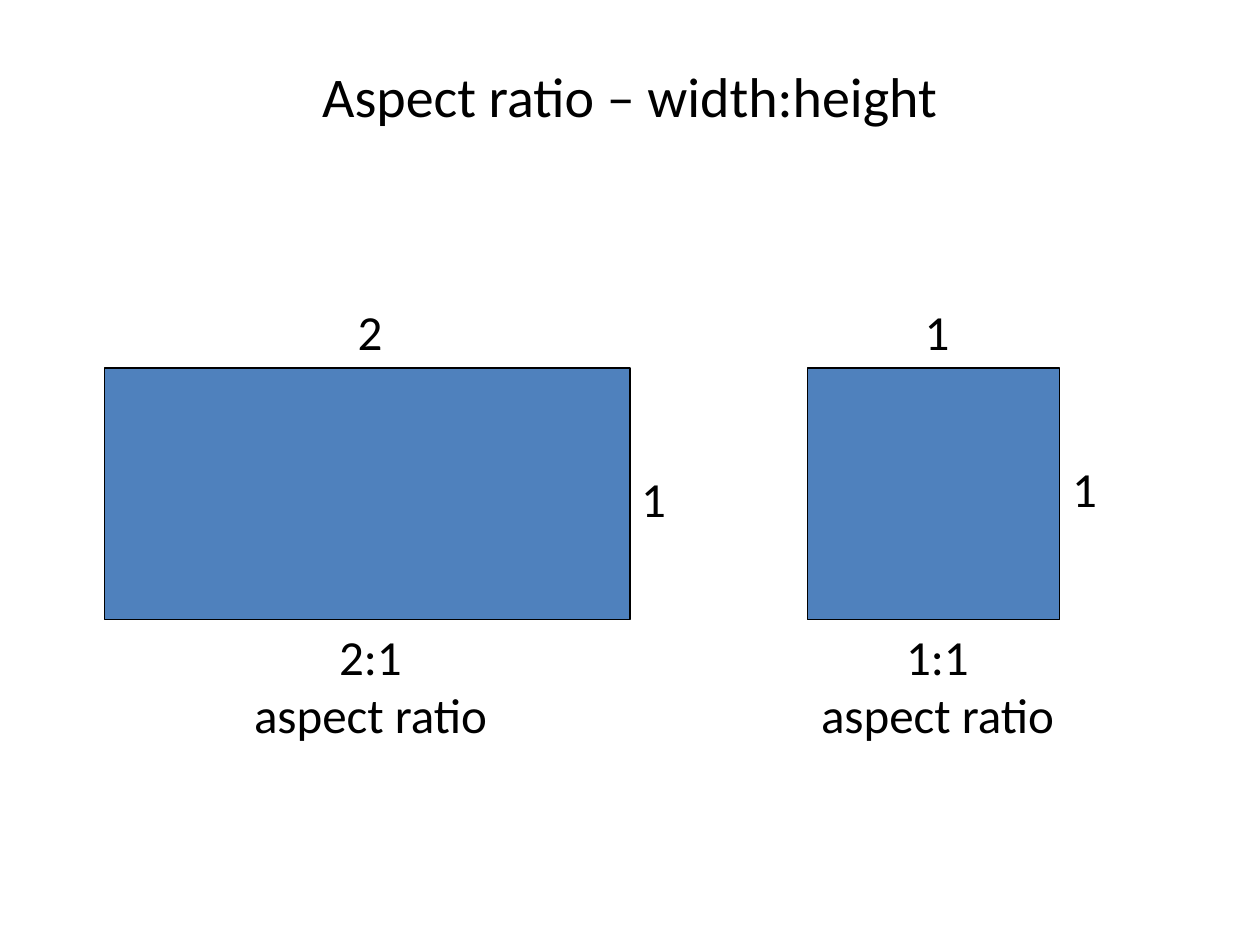
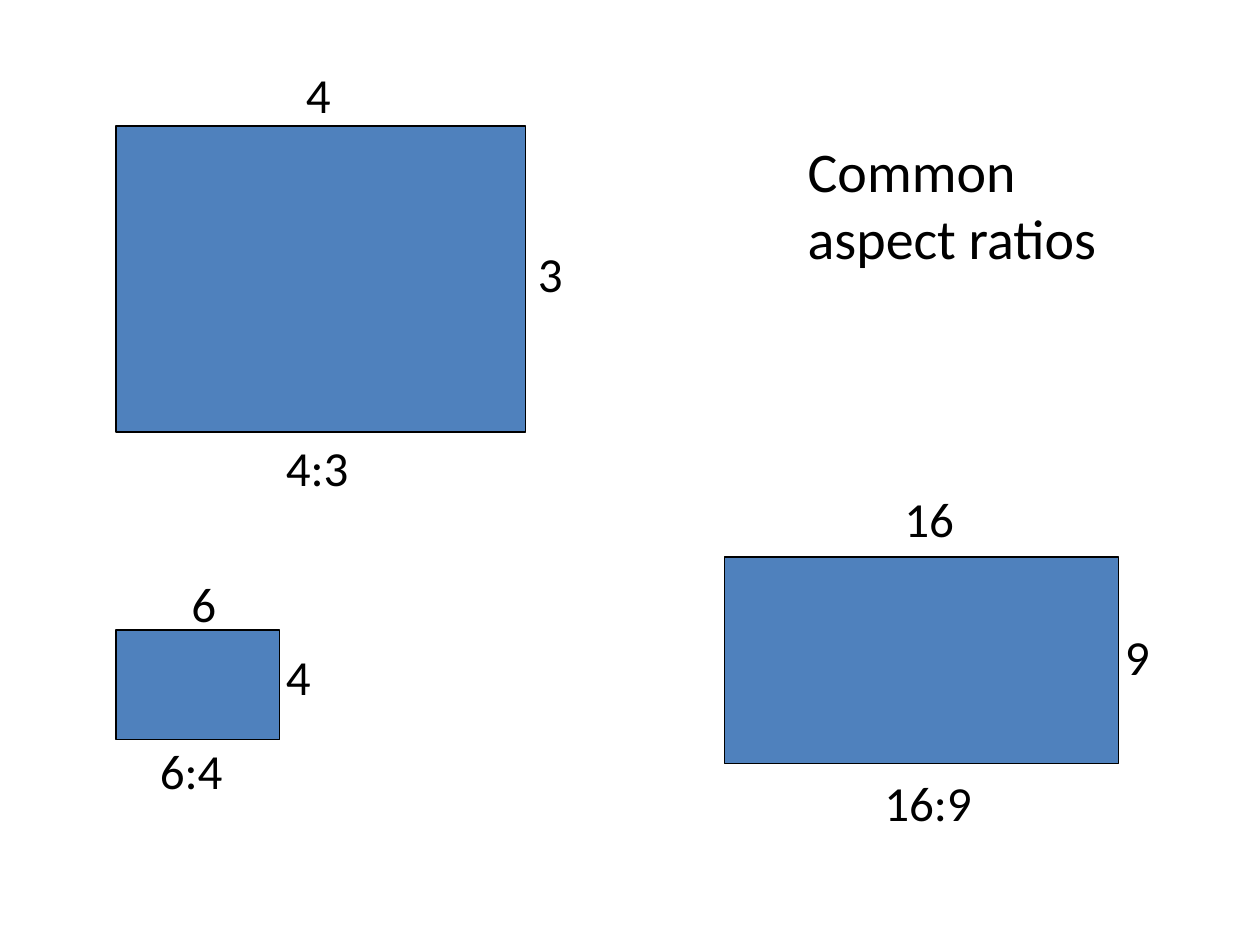
from pptx import Presentation
from pptx.dml.color import RGBColor
from pptx.enum.shapes import MSO_SHAPE
from pptx.enum.text import MSO_ANCHOR, MSO_AUTO_SIZE, PP_ALIGN
from pptx.util import Emu, Pt

PX = 9144  # 100 px to the inch
COLORS = {"fill": "4F81BD", "ink": "000000"}
LEFT, CENTER = PP_ALIGN.LEFT, PP_ALIGN.CENTER
TITLE = {"name": "Calibri", "size": Pt(32), "bold": False}
LABEL = {"name": "Calibri", "size": Pt(28)}


def color(key):
    return RGBColor.from_string(COLORS[key])


def write(shape, text, style, align, wrap=False):
    frame = shape.text_frame
    frame.text = text
    form = {
        "word_wrap": wrap,
        "auto_size": MSO_AUTO_SIZE.SHAPE_TO_FIT_TEXT,
        "vertical_anchor": MSO_ANCHOR.TOP,
    }
    for key, value in form.items():
        setattr(frame, key, value)
    for para in frame.paragraphs:
        para.alignment = align
        for key, value in style.items():
            setattr(para.font, key, value)
        para.font.color.rgb = color("ink")


# Boxes are left, top, width, height; labels are text, then a box.
SLIDES = [
    {
        "title": ("Aspect ratio – width:height", (0, 44, 1000, 64), CENTER, True),
        "rects": [(641, 292, 200, 200), (83, 292, 417, 200)],
        "labels": [
            ("1", 841, 359, 42, 57),
            ("1", 724, 234, 42, 57),
            ("1", 499, 367, 42, 57),
            ("2", 274, 234, 42, 57),
            ("2:1\naspect ratio", 183, 492, 222, 103),
            ("1:1\naspect ratio", 633, 492, 222, 103),
        ],
    },
    {
        "title": ("Common\naspect ratios", (631, 103, 252, 118), LEFT, False),
        "rects": [(92, 100, 325, 243), (92, 500, 130, 87), (575, 442, 313, 164)],
        "labels": [
            ("4", 233, 46, 42, 57),
            ("3", 417, 188, 42, 57),
            ("4:3", 217, 342, 74, 57),
            ("6", 142, 450, 42, 57),
            ("4", 217, 508, 42, 57),
            ("6:4", 117, 583, 74, 57),
            ("16", 708, 383, 64, 57),
            ("9", 883, 492, 42, 57),
            ("16:9", 692, 608, 96, 57),
        ],
    },
]

deck = Presentation()
deck.slide_width, deck.slide_height = Emu(1000 * PX), Emu(750 * PX)

for page in SLIDES:
    slide = deck.slides.add_slide(deck.slide_layouts[5])
    text, box, align, wrap = page["title"]
    title = slide.shapes.title
    for side, size in zip(("left", "top", "width", "height"), box):
        setattr(title, side, Emu(size * PX))
    write(title, text, TITLE, align, wrap)

    for box in page["rects"]:
        rect = slide.shapes.add_shape(MSO_SHAPE.RECTANGLE, *(Emu(n * PX) for n in box))
        rect.shadow.inherit = False
        rect.fill.solid()
        rect.fill.fore_color.rgb = color("fill")
        rect.line.color.rgb = color("ink")
        rect.line.width = Pt(0.75)

    for text, *box in page["labels"]:
        label = slide.shapes.add_textbox(*(Emu(n * PX) for n in box))
        write(label, text, LABEL, CENTER if "\n" in text else LEFT)

deck.save("out.pptx")
